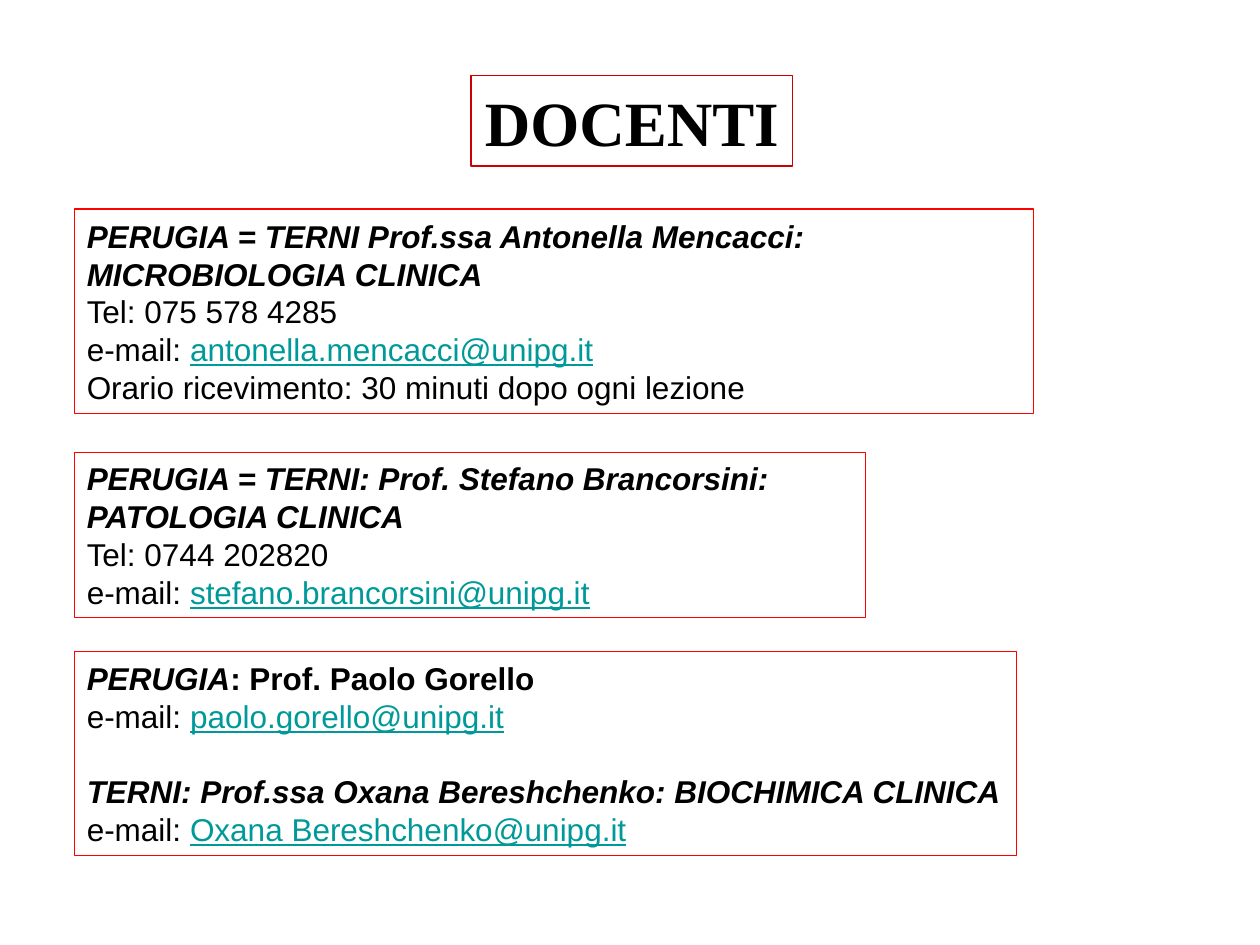
from pptx import Presentation
from pptx.dml.color import RGBColor
from pptx.enum.shapes import MSO_SHAPE
from pptx.enum.text import MSO_ANCHOR, PP_ALIGN
from pptx.util import Inches, Pt

COLORS = {"text": "000000", "link": "009999", "frame": "FF0000", "title_frame": "CC0000"}
LEFT = 0.59
LINE_HEIGHT = 1.2
BODY_SIZE = 18
HEADING = {"bold": True, "italic": True}


def add_span(para, text, size=BODY_SIZE, font="Arial", color="text",
             bold=False, italic=False, underline=False):
    span = para.add_run()
    span.text = text
    span.font.size = Pt(size)
    span.font.name = font
    span.font.color.rgb = RGBColor.from_string(COLORS[color])
    span.font.bold = bold
    span.font.italic = italic
    span.font.underline = underline


def add_frame(page, left, top, width, height, color="frame", weight=0.75, wrap=True):
    """Add an unfilled outlined rectangle and return its text frame."""
    box = page.shapes.add_shape(
        MSO_SHAPE.RECTANGLE, Inches(left), Inches(top), Inches(width), Inches(height))
    box.shadow.inherit = False
    box.fill.background()
    box.line.color.rgb = RGBColor.from_string(COLORS[color])
    box.line.width = Pt(weight)
    box.text_frame.word_wrap = wrap
    box.text_frame.vertical_anchor = MSO_ANCHOR.MIDDLE
    return box.text_frame


def format_para(para, size=BODY_SIZE, align=PP_ALIGN.LEFT, space_before=0):
    para.alignment = align
    para.line_spacing = Pt(size * LINE_HEIGHT)
    para.space_before = Pt(space_before)


def add_title(page, left, top, width, height):
    frame = add_frame(page, left, top, width, height, "title_frame", 1, wrap=False)
    para = frame.paragraphs[0]
    format_para(para, size=36, align=PP_ALIGN.CENTER)
    add_span(para, "DOCENTI", size=36, font="Times New Roman", bold=True)


def email(address):
    return [("e-mail: ", {}), (address, {"color": "link", "underline": True})]


def add_contact_card(page, top, width, height, entries):
    """Stack the teachers' entries, one blank line's height apart."""
    frame = add_frame(page, LEFT, top, width, height)
    para = frame.paragraphs[0]
    for entry_index, entry in enumerate(entries):
        for line_index, spans in enumerate(entry):
            if entry_index or line_index:
                para = frame.add_paragraph()
            starts_later_entry = entry_index > 0 and line_index == 0
            format_para(para, space_before=BODY_SIZE * LINE_HEIGHT if starts_later_entry else 0)
            for text, style in spans:
                add_span(para, text, **style)


MENCACCI = [
    [("PERUGIA = TERNI Prof.ssa Antonella Mencacci: MICROBIOLOGIA CLINICA", HEADING)],
    [("Tel: 075 578 4285", {})],
    email("antonella.mencacci@unipg.it"),
    [("Orario ricevimento: 30 minuti dopo ogni lezione", {})],
]
BRANCORSINI = [
    [("PERUGIA = TERNI: Prof. Stefano Brancorsini: PATOLOGIA CLINICA", HEADING)],
    [("Tel: 0744 202820", {})],
    email("stefano.brancorsini@unipg.it"),
]
GORELLO = [
    [("PERUGIA", HEADING), (": Prof. Paolo Gorello", {"bold": True})],
    email("paolo.gorello@unipg.it"),
]
BERESHCHENKO = [
    [("TERNI: Prof.ssa Oxana Bereshchenko: BIOCHIMICA CLINICA", HEADING)],
    email("Oxana Bereshchenko@unipg.it"),
]


def main():
    deck = Presentation()
    deck.slide_width, deck.slide_height = Inches(10), Inches(7.5)
    page = deck.slides.add_slide(deck.slide_layouts[6])
    add_contact_card(page, 1.66, 7.61, 1.62, [MENCACCI])
    add_title(page, 3.74, 0.6, 2.55, 0.72)
    add_contact_card(page, 3.59, 6.28, 1.31, [BRANCORSINI])
    add_contact_card(page, 5.17, 7.48, 1.62, [GORELLO, BERESHCHENKO])
    deck.save("out.pptx")


if __name__ == "__main__":
    main()
